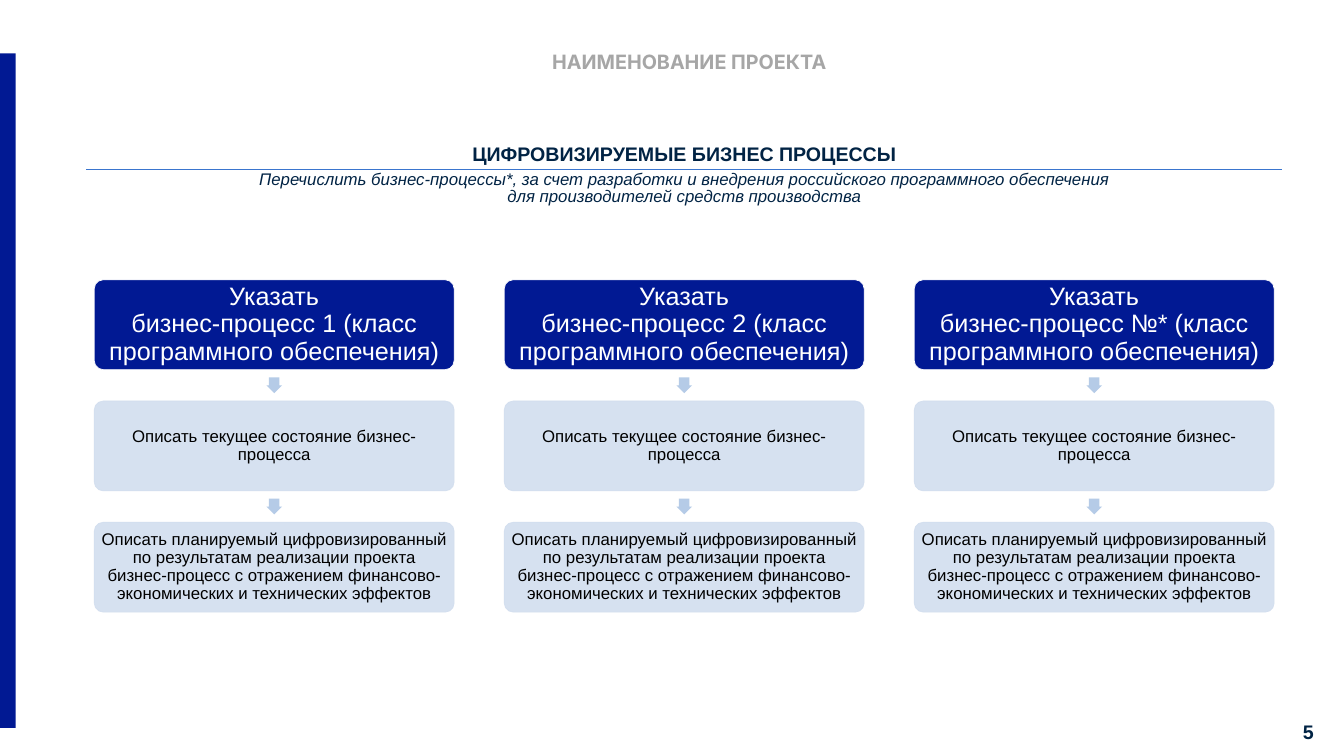
from pptx import Presentation
from pptx.dml.color import RGBColor
from pptx.enum.shapes import MSO_SHAPE
from pptx.enum.text import MSO_ANCHOR, PP_ALIGN
from pptx.oxml import parse_xml
from pptx.oxml.ns import nsdecls
from pptx.util import Cm, Pt

HUES = {
    "navy": "011993", "ink": "012344", "gray": "A6A6A6", "rule": "3A75CE",
    "arrow": "B5CBE7", "pale": "D2DEEF", "white": "FFFFFF", "black": "000000",
}
STEPS = [
    "Описать текущее состояние бизнес-процесса",
    "Описать планируемый цифровизированный\nпо результатам реализации проекта\n"
    "бизнес-процесс с отражением финансово-экономических и технических эффектов",
]


def hue(name):
    return RGBColor.from_string(HUES[name])


def write(frame, text, size, color, face="Arial", bold=False, italic=False,
          align=PP_ALIGN.CENTER, lead=None):
    frame.word_wrap = True
    para = frame.paragraphs[0]
    para.text = text
    para.alignment = align
    para.line_spacing = lead
    font = para.font
    font.name, font.size = face, Pt(size)
    font.bold, font.italic = bold, italic
    font.color.rgb = hue(color)


def pad(frame, size):
    frame.margin_left = frame.margin_right = Cm(size)
    frame.margin_top = frame.margin_bottom = Cm(size)
    frame.vertical_anchor = MSO_ANCHOR.MIDDLE


def draw(slide, kind, box, fill, line=None, alpha=None):
    shape = slide.shapes.add_shape(kind, *map(Cm, box))
    shape.shadow.inherit = False
    shape.fill.solid()
    shape.fill.fore_color.rgb = hue(fill)
    if line:
        shape.line.color.rgb = hue(line)
        shape.line.width = Pt(1)
    else:
        shape.line.fill.background()
    if alpha:
        for color in shape._element.spPr.iter("{*}srgbClr"):
            color.append(parse_xml(f'<a:alpha {nsdecls("a")} val="{alpha * 1000}"/>'))
    return shape


def add_title(slide, box):
    frame = slide.shapes.add_textbox(*map(Cm, box)).text_frame
    write(frame, "НАИМЕНОВАНИЕ ПРОЕКТА", 28.2, "gray", "Inter", bold=True)


def add_number(slide, box):
    frame = slide.shapes.add_textbox(*map(Cm, box)).text_frame
    pad(frame, 0.33)
    write(frame, "5", 28, "ink", bold=True, align=PP_ALIGN.RIGHT)


def add_rule(cell, side):
    cell._tc.get_or_add_tcPr().insert(0, parse_xml(
        f'<a:{side} {nsdecls("a")} w="{Pt(2.25)}"><a:solidFill>'
        f'<a:srgbClr val="{HUES["rule"]}"/></a:solidFill></a:{side}>'))


def add_header(slide, box):
    table = slide.shapes.add_table(2, 1, *map(Cm, box)).table
    table.first_row = table.horz_banding = False
    for row, high in zip(table.rows, (0.91, 3.3)):
        row.height = Cm(high)
    head, note = table.cell(0, 0), table.cell(1, 0)
    for cell, side in ((head, "lnB"), (note, "lnT")):
        cell.fill.background()
        add_rule(cell, side)
    write(head.text_frame, "ЦИФРОВИЗИРУЕМЫЕ БИЗНЕС ПРОЦЕССЫ", 28, "ink", bold=True)
    head.text_frame.paragraphs[0].space_after = Pt(6)
    write(note.text_frame,
          "Перечислить бизнес-процессы*, за счет разработки и внедрения "
          "российского программного обеспечения\nдля производителей средств производства",
          24, "ink", italic=True, lead=0.9)


def add_card(slide, box, text, main):
    fill, line, alpha = ("navy", "white", None) if main else ("pale", "pale", 90)
    card = draw(slide, MSO_SHAPE.ROUNDED_RECTANGLE, box, fill, line, alpha)
    card.adjustments[0] = 0.1
    pad(card.text_frame, 0.13 if main else 0.08)
    write(card.text_frame, text, 36 if main else 24,
          "white" if main else "black", lead=0.9)


def add_process(slide, box, label):
    left, top, width, height = box
    high, size = 4.53, 0.79
    pitch = (height - high) / 2
    texts = [f"Указать\nбизнес-процесс {label} (класс программного обеспечения)", *STEPS]
    for i, text in enumerate(texts):
        y = top + i * pitch
        if i:  # arrow centred in the gap above the card
            mid = y - (pitch - high) / 2
            spot = (left + (width - size) / 2, mid - size / 2, size, size)
            arrow = draw(slide, MSO_SHAPE.RIGHT_ARROW, spot, "arrow")
            arrow.rotation = 90
            arrow.adjustments[0] = 0.667
        add_card(slide, (left, y, width, high), text, main=i == 0)


def add_flow(slide, box):
    left, top, width, height = box
    wide = 18.14
    labels = ("1", "2", "№*")
    pitch = (width - wide) / (len(labels) - 1)
    for i, label in enumerate(labels):
        add_process(slide, (left + i * pitch, top, wide, height), label)


def main():
    deck = Presentation()
    deck.slide_width, deck.slide_height = Cm(67.74), Cm(38.1)
    slide = deck.slides.add_slide(deck.slide_layouts[6])
    add_number(slide, (64.49, 36.12, 2.06, 1.55))
    add_header(slide, (4.37, 7.11, 60.22, 4.21))
    # Side bar
    draw(slide, MSO_SHAPE.RECTANGLE, (0, 2.69, 0.79, 33.99), "navy")
    add_title(slide, (4.88, 2.39, 59.72, 1.47))
    add_flow(slide, (4.75, 14.1, 59.47, 16.75))
    deck.save("out.pptx")


if __name__ == "__main__":
    main()
